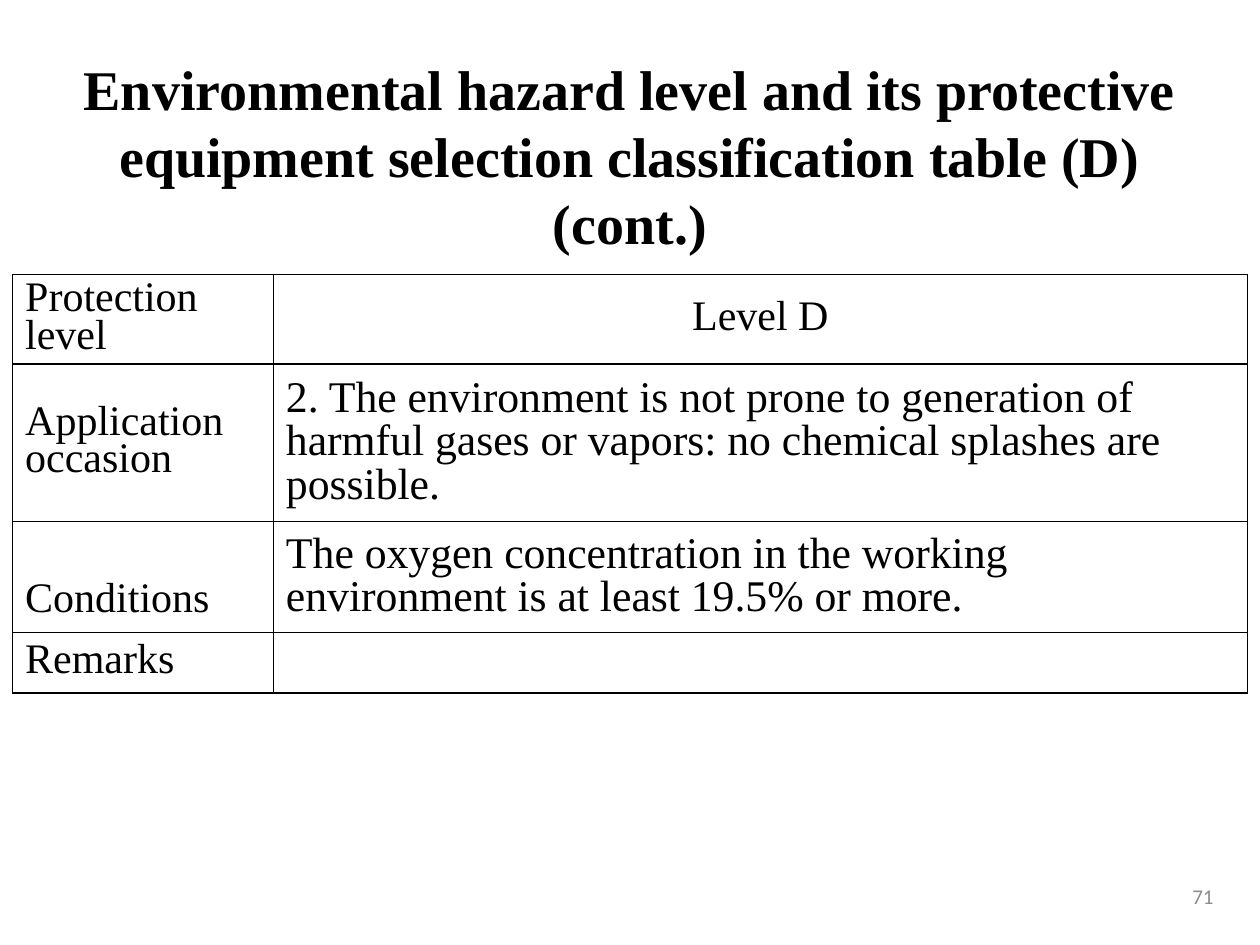
from dataclasses import dataclass

from lxml import etree
from pptx import Presentation
from pptx.dml.color import RGBColor
from pptx.enum.text import MSO_ANCHOR, MSO_AUTO_SIZE, PP_ALIGN
from pptx.oxml.ns import qn
from pptx.util import Inches, Pt

LEFT, MID, RIGHT = PP_ALIGN.LEFT, PP_ALIGN.CENTER, PP_ALIGN.RIGHT
CENTER, LOW = MSO_ANCHOR.MIDDLE, MSO_ANCHOR.BOTTOM
FIXED = MSO_AUTO_SIZE.NONE
SERIF, SANS = "Times New Roman", "Calibri"
HUES = {"ink": "000000", "gray": "8C8C8C"}


@dataclass
class Style:
    size: int
    face: str = SERIF
    hue: str = "ink"
    bold: bool = False
    align: PP_ALIGN = LEFT
    pitch: float = 1.0


@dataclass
class Row:
    height: float
    label: str
    text: str
    style: Style
    anchor: MSO_ANCHOR = CENTER


LABEL = Style(24, pitch=0.8)
LEVEL = Style(24, align=MID, pitch=0.8)
DETAIL = Style(25, pitch=0.9)
TITLE = Style(32, bold=True, align=MID)
NUMBER = Style(12, face=SANS, hue="gray", align=RIGHT)

ROWS = [
    Row(0.71, "Protection level", "Level D", LEVEL),
    Row(1.25, "Application occasion",
        "2. The environment is not prone to generation of harmful gases "
        "or vapors: no chemical splashes are possible.", DETAIL),
    Row(0.88, "Conditions",
        "The oxygen concentration in the working environment is at least "
        "19.5% or more.", DETAIL, LOW),
    Row(0.48, "Remarks", "", DETAIL),
]
WIDTHS = [2.07, 7.73]


def write(frame, text: str, style: Style) -> None:
    para = frame.paragraphs[0]
    para.alignment = style.align
    para.line_spacing = style.pitch
    run = para.add_run()
    run.text = text
    font = run.font
    font.name, font.size, font.bold = style.face, Pt(style.size), style.bold
    font.color.rgb = RGBColor.from_string(HUES[style.hue])


def border(cell) -> None:
    props = cell._tc.get_or_add_tcPr()
    for spot, side in enumerate(("lnL", "lnR", "lnT", "lnB")):
        line = etree.Element(qn(f"a:{side}"), w=str(Pt(1)))
        fill = etree.SubElement(line, qn("a:solidFill"))
        etree.SubElement(fill, qn("a:srgbClr"), val=HUES["ink"])
        props.insert(spot, line)


def fill_cell(cell, text: str, style: Style, anchor: MSO_ANCHOR) -> None:
    cell.fill.background()
    cell.vertical_anchor = anchor
    if anchor == LOW:
        cell.margin_bottom = Inches(0.1)
    border(cell)
    if text:
        write(cell.text_frame, text, style)


def add_grid(slide) -> None:
    high = sum(row.height for row in ROWS)
    table = slide.shapes.add_table(
        len(ROWS), len(WIDTHS), Inches(0.1), Inches(2.18),
        Inches(sum(WIDTHS)), Inches(high)).table
    table.first_row = table.horz_banding = False
    for col, width in zip(table.columns, WIDTHS):
        col.width = Inches(width)
    for line, row in zip(table.rows, ROWS):
        line.height = Inches(row.height)
        label, main = line.cells
        fill_cell(label, row.label, LABEL, row.anchor)
        fill_cell(main, row.text, row.style, CENTER)


def add_title(slide) -> None:
    title = slide.shapes.title
    title.left, title.top = Inches(0.19), Inches(0.81)
    title.width, title.height = Inches(9.62), Inches(1.27)
    frame = title.text_frame
    frame.auto_size, frame.word_wrap = FIXED, True
    frame.vertical_anchor = LOW
    write(frame, "Environmental hazard level and its protective equipment "
          "selection classification table (D) (cont.)", TITLE)


def add_number(slide) -> None:
    box = slide.shapes.add_textbox(
        Inches(7.4), Inches(6.91), Inches(2.33), Inches(0.4))
    frame = box.text_frame
    frame.word_wrap = True
    frame.vertical_anchor = CENTER
    write(frame, "71", NUMBER)


def main() -> None:
    deck = Presentation()
    deck.slide_width, deck.slide_height = Inches(10), Inches(7.5)
    slide = deck.slides.add_slide(deck.slide_layouts[5])
    add_grid(slide)
    add_title(slide)
    add_number(slide)
    deck.save("out.pptx")


if __name__ == "__main__":
    main()
